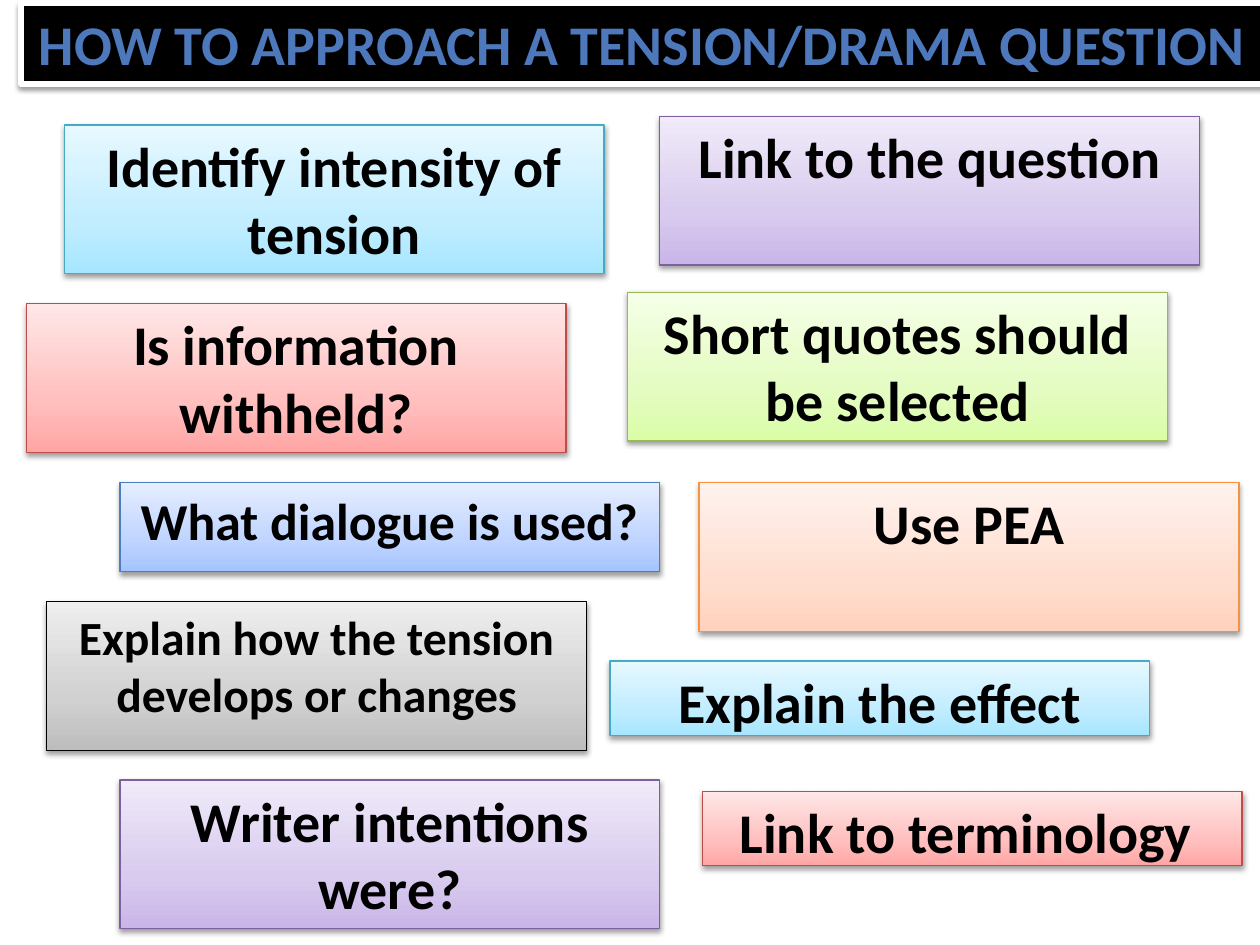
import pptx
import pptx.util
import pptx.dml.color
import pptx.enum.dml
import pptx.enum.shapes
import pptx.enum.text
import pptx.oxml
import pptx.oxml.ns
from lxml import etree

Pt = pptx.util.Pt
RGB = pptx.dml.color.RGBColor.from_string
qn = pptx.oxml.ns.qn

COLOURS = {"black": "000000", "white": "FFFFFF"}

# Each theme: outline, then gradient stops from bottom to top
THEMES = {
    "aqua": ("46AAC5", "A7E6FF", "C1EDFF", "E7F8FF"),
    "purple": ("7D60A0", "C9B5E8", "D8CBEE", "F0EAF9"),
    "green": ("98B955", "DAFDA7", "E4FCC2", "F5FFE7"),
    "red": ("BF4C48", "FFA6A5", "FFC0BF", "FFE7E7"),
    "orange": ("F69240", "FFD2BD", "FFDED0", "FFF2ED"),
    "blue": ("4B7EBC", "A4C4FF", "BFD4FF", "E6EEFF"),
    "grey": ("000000", "BDBDBD", "D1D1D1", "EEEEEE"),
}
TITLE_STOPS = [(0, "7494C9"), (49, "4D79BC"), (50, "346AAA"), (92, "325F94"), (100, "315D91")]

# Text, theme, left, top, height, font size
CARDS = [
    ("Identify intensity of tension", "aqua", 36.75, 71.5, 85, 32),
    ("Link to the question", "purple", 377, 66.5, 85, 32),
    ("Short quotes should be selected", "green", 358.75, 167, 85, 32),
    ("Is information withheld?", "red", 15, 173.5, 85, 32),
    ("Use PEA", "orange", 399.5, 275.75, 85, 32),
    ("What dialogue is used?", "blue", 68.5, 275.75, 51, 29.6),
    ("Explain how the tension develops or changes", "grey", 26.75, 343.75, 85, 27.2),
    ("Explain the effect", "aqua", 348.5, 377.75, 42.5, 32),
    ("Writer intentions were?", "purple", 68.5, 445.75, 85, 32),
    ("Link to terminology ", "red", 401.25, 452.25, 42.5, 32),
]
CARD_WIDTH = 308.5


def add_box(left, top, width, height, text, size, outline, outline_width):
    """Add a shadowed rectangle with bold centred text; return shape and run."""
    shape = slide.shapes.add_shape(
        pptx.enum.shapes.MSO_SHAPE.RECTANGLE, Pt(left), Pt(top), Pt(width), Pt(height))
    shape.line.color.rgb = RGB(outline)
    shape.line.width = Pt(outline_width)
    shape.shadow.inherit = False
    effects = shape._element.spPr.find(qn("a:effectLst"))
    shadow = etree.SubElement(effects, qn("a:outerShdw"), blurRad=str(Pt(3.1)),
                              dist=str(Pt(1.6)), dir="5400000", rotWithShape="0")
    shade = etree.SubElement(shadow, qn("a:srgbClr"), val=COLOURS["black"])
    etree.SubElement(shade, qn("a:alpha"), val="38000")
    frame = shape.text_frame
    frame.text = text
    frame.word_wrap = True
    frame.vertical_anchor = pptx.enum.text.MSO_ANCHOR.TOP
    paragraph = frame.paragraphs[0]
    paragraph.alignment = pptx.enum.text.PP_ALIGN.CENTER
    run = paragraph.runs[0]
    run.font.name = "Calibri"
    run.font.size = Pt(size)
    run.font.bold = True
    return shape, run


def set_gradient(fill, owner, stops, angle):
    """Give a fill its stops; owner is the XML element that holds the fill."""
    fill.gradient()
    fill.gradient_angle = angle
    stop_list = owner.find(qn("a:gradFill")).find(qn("a:gsLst"))
    for old_stop in list(stop_list):
        stop_list.remove(old_stop)
    for position, colour in stops:
        stop = etree.SubElement(stop_list, qn("a:gs"), pos=str(position * 1000))
        etree.SubElement(stop, qn("a:srgbClr"), val=colour)


presentation = pptx.Presentation()
presentation.slide_width = Pt(720)
presentation.slide_height = Pt(540)
slide = presentation.slides.add_slide(presentation.slide_layouts[6])

# Title bar
title, run = add_box(12, 2, 710, 46, "HOW TO APPROACH A TENSION/DRAMA QUESTION",
                     32, COLOURS["white"], 3)
title.fill.solid()
title.fill.fore_color.rgb = RGB(COLOURS["black"])
title.text_frame.word_wrap = False
title.text_frame.auto_size = pptx.enum.text.MSO_AUTO_SIZE.SHAPE_TO_FIT_TEXT
set_gradient(run.font.fill, run.font._element, TITLE_STOPS, 270)

# Advice cards
for text, theme, left, top, height, size in CARDS:
    outline, *shades = THEMES[theme]
    card, run = add_box(left, top, CARD_WIDTH, height, text, size, outline, 0.75)
    set_gradient(card.fill, card._element.spPr, zip((0, 35, 100), shades), 90)
    run.font.color.rgb = RGB(COLOURS["black"])

    # Thin outline around the letters
    letter_line = etree.Element(qn("a:ln"), w=str(Pt(0.75)))
    line_fill = etree.SubElement(letter_line, qn("a:solidFill"))
    etree.SubElement(line_fill, qn("a:srgbClr"), val=COLOURS["black"])
    run.font._element.insert(0, letter_line)

    # Space before, as a share of the text size
    properties = card.text_frame.paragraphs[0]._p.get_or_add_pPr()
    space = etree.SubElement(properties, qn("a:spcBef"))
    etree.SubElement(space, qn("a:spcPct"), val="20000")

presentation.save("out.pptx")
